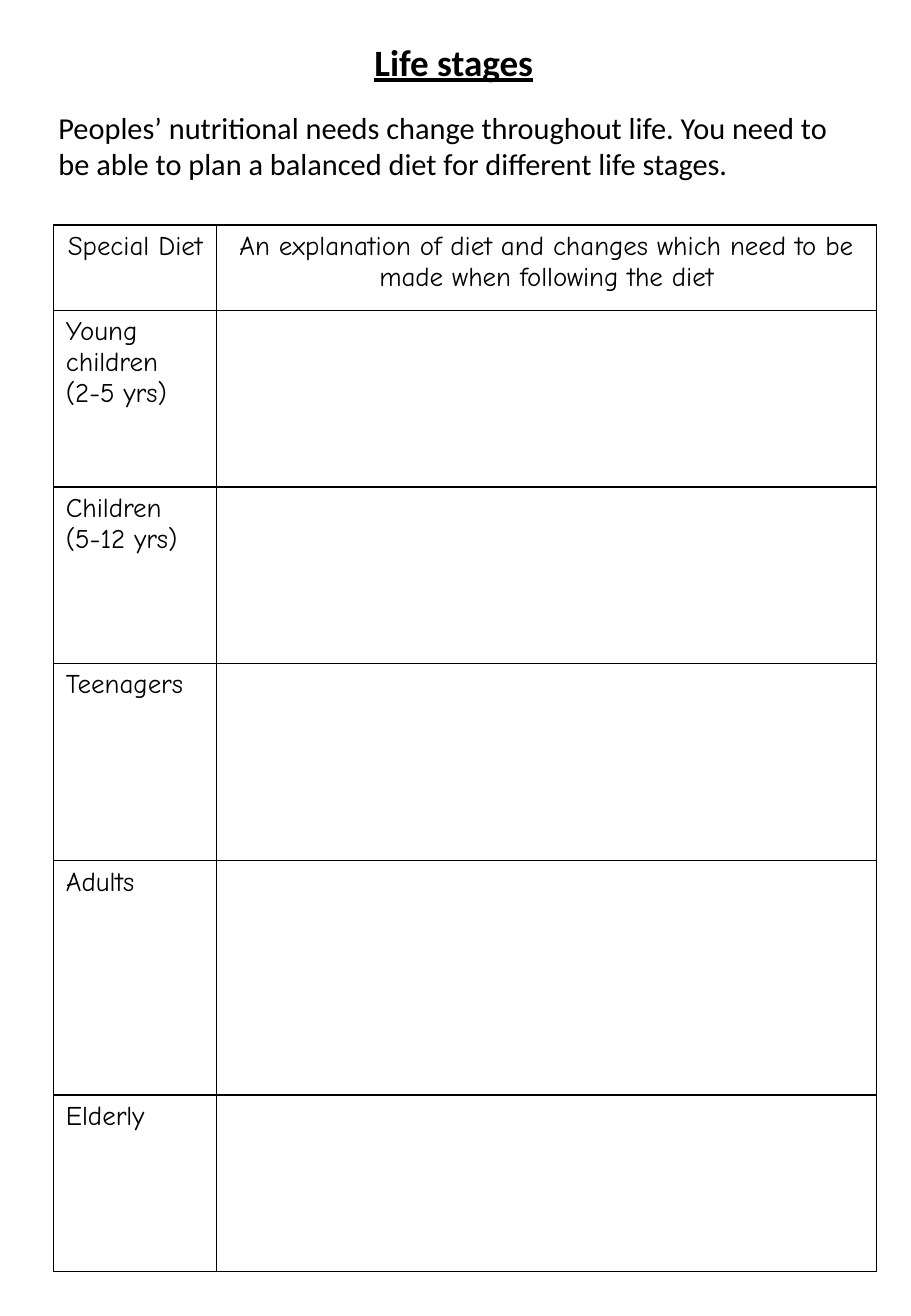
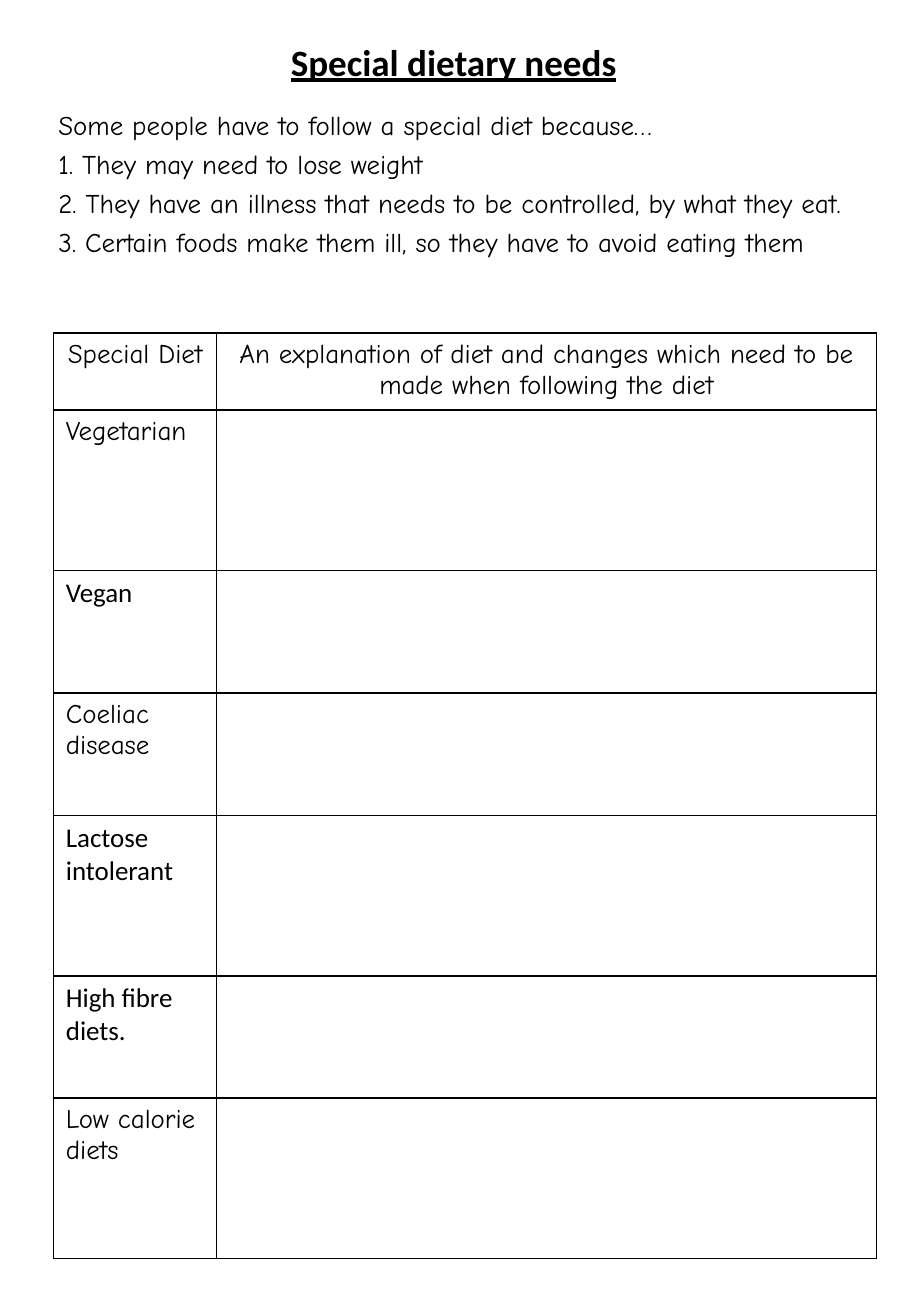
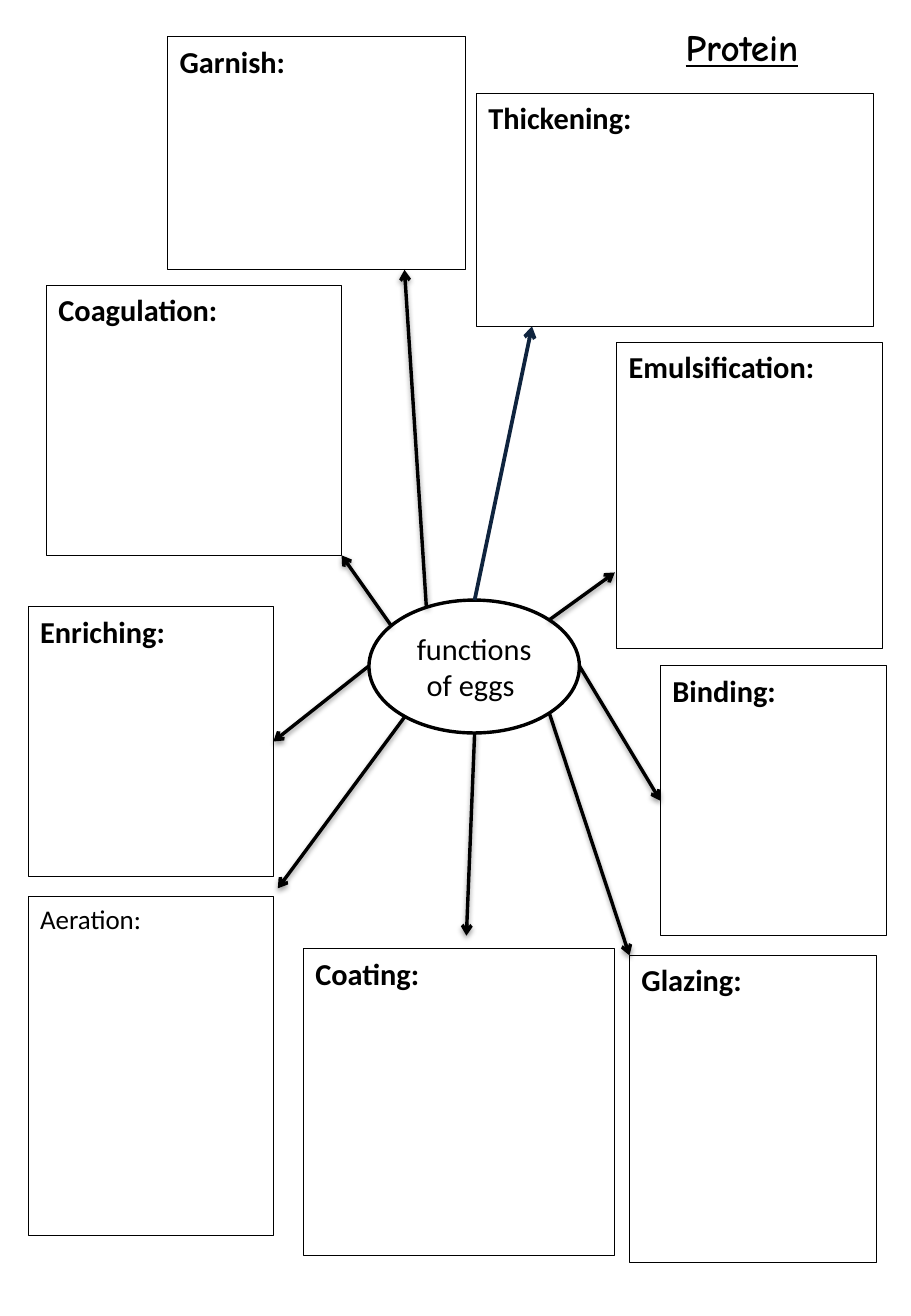
from dataclasses import dataclass

from lxml.etree import SubElement
from pptx import Presentation
from pptx.dml.color import RGBColor
from pptx.enum.shapes import MSO_CONNECTOR, MSO_SHAPE
from pptx.enum.text import MSO_ANCHOR, PP_ALIGN
from pptx.oxml import parse_xml
from pptx.oxml.ns import nsdecls, qn
from pptx.shapes.autoshape import Shape
from pptx.slide import Slide
from pptx.text.text import TextFrame
from pptx.util import Emu, Inches, Pt

Spot = tuple[float, float]
Area = tuple[float, float, float, float]

WIDE, HIGH = Inches(7.5), Inches(10.83)


@dataclass(frozen=True)
class Theme:
    ink: str = "000000"
    navy: str = "0F243E"
    paper: str = "FFFFFF"
    plain: str = "Calibri"
    comic: str = "Comic Neue"
    title: int = 22
    body: int = 18
    small: int = 16
    rule: float = 1
    thin: float = 0.5
    bold: float = 2
    gap: float = 4


THEME = Theme()


@dataclass(frozen=True)
class Row:
    label: str
    high: float
    font: str = THEME.comic


@dataclass(frozen=True)
class Sheet:
    title: str
    intro: str
    font: str
    size: int
    deep: float
    top: float
    head: float
    rows: tuple[Row, ...]


@dataclass(frozen=True)
class Box:
    label: str
    area: Area
    start: Spot
    end: Spot
    side: int | None = None
    color: str = THEME.ink
    line: float = THEME.bold
    shade: bool = True
    size: int = THEME.body
    bold: bool = True


# Lengths are percentages of the slide's width and height
def across(share: float) -> Emu:
    return Emu(round(WIDE * share / 100))


def down(share: float) -> Emu:
    return Emu(round(HIGH * share / 100))


def place(area: Area) -> tuple[Emu, Emu, Emu, Emu]:
    left, top, wide, high = area
    return across(left), down(top), across(wide), down(high)


TITLE: Area = (4.8, 2, 90, 5.3)
LEFT, COLS = 5.9, (17.9, 72.4)
HEADS = ("Special Diet",
         "An explanation of diet and changes which need to be made "
         "when following the diet")

SHEETS = (
    Sheet("Life stages",
          "Peoples’ nutritional needs change throughout life. You need to "
          "be able to plan a balanced diet for different life stages.",
          THEME.plain, THEME.body, 8.7, 17.1, 6.5,
          (Row("Young children\n(2-5 yrs)", 13.4),
           Row("Children\n(5-12 yrs)", 13.4),
           Row("Teenagers", 15),
           Row("Adults", 17.8),
           Row("Elderly", 13.4))),
    Sheet("Special dietary needs",
          "Some people have to follow a special diet because…\n"
          "1. They may need to lose weight\n"
          "2. They have an illness that needs to be controlled, "
          "by what they eat.\n"
          "3. Certain foods make them ill, so they have to avoid eating them",
          THEME.comic, THEME.small, 17.5, 25.3, 5.6,
          (Row("Vegetarian", 12.2),
           Row("Vegan", 9.3, THEME.plain),
           Row("Coeliac disease", 9.3),
           Row("Lactose intolerant", 12.2, THEME.plain),
           Row("High fibre diets.", 9.3, THEME.plain),
           Row("Low calorie diets", 12.2))),
)

HUB: Area = (40.5, 45.6, 23.1, 10.1)
BOXES = (
    Box("Emulsification:", (67.7, 26, 29.2, 23.3), (60.3, 47.1), (67.5, 43.5)),
    Box("Aeration:", (3.1, 68.1, 26.9, 25.8), (44.4, 54.5), (30.5, 67.5),
        size=THEME.small, bold=False),
    Box("Binding:", (72.5, 50.6, 24.8, 20.5), (63.6, 50.6), (72.5, 60.9),
        side=1),
    Box("Thickening:", (52.3, 7.1, 43.6, 17.7), (52.1, 45.6), (58.4, 24.8),
        color=THEME.navy, line=2.25, shade=False),
    Box("Coagulation:", (5.1, 21.7, 32.4, 20.5), (42.9, 47.5), (37.5, 42.2)),
    Box("Coating:", (33.3, 72.1, 34.1, 23.3), (52.1, 55.7), (51.2, 71.1)),
    Box("Glazing:", (69.1, 72.6, 27.1, 23.3), (60.3, 54.2), (69.1, 72.6)),
    Box("Garnish:", (18.4, 2.8, 32.7, 17.7), (46.8, 46.1), (44.4, 20.5)),
    Box("Enriching:", (3.1, 46.1, 26.9, 20.5), (40.5, 50.6), (30, 56.3),
        side=3),
)


# Text
def write(frame: TextFrame, text: str, font: str, size: int,
          align: PP_ALIGN = PP_ALIGN.LEFT, bold: bool = False,
          under: bool = False, gap: float = 0) -> None:
    frame.text = text
    frame.word_wrap = True
    for para in frame.paragraphs:
        para.alignment = align
        para.space_before = Pt(gap)
        for run in para.runs:
            run.font.name = font
            run.font.size = Pt(size)
            run.font.bold = bold
            run.font.underline = under
            run.font.color.rgb = RGBColor.from_string(THEME.ink)


def add_title(slide: Slide, text: str, area: Area = TITLE,
              font: str = THEME.plain) -> None:
    frame = slide.shapes.add_textbox(*place(area)).text_frame
    frame.vertical_anchor = MSO_ANCHOR.MIDDLE
    write(frame, text, font, THEME.title, PP_ALIGN.CENTER, True, True)


# Tables
def add_rules(cell) -> None:
    cell.fill.background()
    props = cell._tc.get_or_add_tcPr()
    for spot, edge in enumerate("LRTB"):
        props.insert(spot, parse_xml(
            f'<a:ln{edge} {nsdecls("a")} w="{Pt(THEME.rule)}"><a:solidFill>'
            f'<a:srgbClr val="{THEME.ink}"/></a:solidFill></a:ln{edge}>'))


def draw_sheet(slide: Slide, sheet: Sheet) -> None:
    add_title(slide, sheet.title)
    intro = slide.shapes.add_textbox(*place((5.1, 7.8, 90, sheet.deep)))
    write(intro.text_frame, sheet.intro, sheet.font, sheet.size,
          gap=THEME.gap)

    highs = [sheet.head, *(row.high for row in sheet.rows)]
    area = (LEFT, sheet.top, sum(COLS), sum(highs))
    table = slide.shapes.add_table(len(highs), len(COLS), *place(area)).table
    table.first_row = table.horz_banding = False
    for col, wide in zip(table.columns, COLS):
        col.width = across(wide)
    for line, high in zip(table.rows, highs):
        line.height = down(high)
    for cell in table.iter_cells():
        add_rules(cell)
    for col, head in enumerate(HEADS):
        write(table.cell(0, col).text_frame, head, THEME.comic, THEME.small,
              PP_ALIGN.CENTER)
    for spot, row in enumerate(sheet.rows, 1):
        write(table.cell(spot, 0).text_frame, row.label, row.font,
              THEME.small)


# Mind map
def add_frame(slide: Slide, kind: MSO_SHAPE, area: Area,
              line: float) -> Shape:
    shape = slide.shapes.add_shape(kind, *place(area))
    shape.shadow.inherit = False
    shape.fill.background()
    shape.line.color.rgb = RGBColor.from_string(THEME.ink)
    shape.line.width = Pt(line)
    return shape


def add_arrow(slide: Slide, box: Box, hub: Shape, frame: Shape) -> None:
    (left, top), (right, low) = box.start, box.end
    arrow = slide.shapes.add_connector(
        MSO_CONNECTOR.STRAIGHT,
        across(left), down(top), across(right), down(low))
    if box.side is not None:
        arrow.end_connect(frame, box.side)
    arrow.line.color.rgb = RGBColor.from_string(box.color)
    arrow.line.width = Pt(box.line)
    SubElement(arrow.line._get_or_add_ln(), qn("a:tailEnd"), type="arrow")
    effect = SubElement(arrow._element.spPr, qn("a:effectLst"))
    if box.shade:
        effect.append(parse_xml(
            f'<a:outerShdw {nsdecls("a")} blurRad="{Pt(3.1)}" '
            f'dist="{Pt(1.6)}" dir="5400000" rotWithShape="0">'
            f'<a:srgbClr val="{THEME.ink}"><a:alpha val="38000"/>'
            '</a:srgbClr></a:outerShdw>'))


def draw_map(slide: Slide) -> None:
    add_title(slide, "Protein", (64.7, 1.3, 33.5, 4.5), THEME.comic)
    hub = add_frame(slide, MSO_SHAPE.OVAL, HUB, THEME.bold)
    hub.fill.solid()
    hub.fill.fore_color.rgb = RGBColor.from_string(THEME.paper)
    hub.text_frame.vertical_anchor = MSO_ANCHOR.MIDDLE
    write(hub.text_frame, "functions of eggs ", THEME.plain, THEME.body,
          PP_ALIGN.CENTER)
    for box in BOXES:
        frame = add_frame(slide, MSO_SHAPE.RECTANGLE, box.area, THEME.thin)
        frame.text_frame.vertical_anchor = MSO_ANCHOR.TOP
        write(frame.text_frame, box.label, THEME.plain, box.size,
              bold=box.bold)
        add_arrow(slide, box, hub, frame)


def main() -> None:
    deck = Presentation()
    deck.slide_width, deck.slide_height = WIDE, HIGH
    blank = deck.slide_layouts[6]
    for sheet in SHEETS:
        draw_sheet(deck.slides.add_slide(blank), sheet)
    draw_map(deck.slides.add_slide(blank))
    deck.save("out.pptx")


if __name__ == "__main__":
    main()
